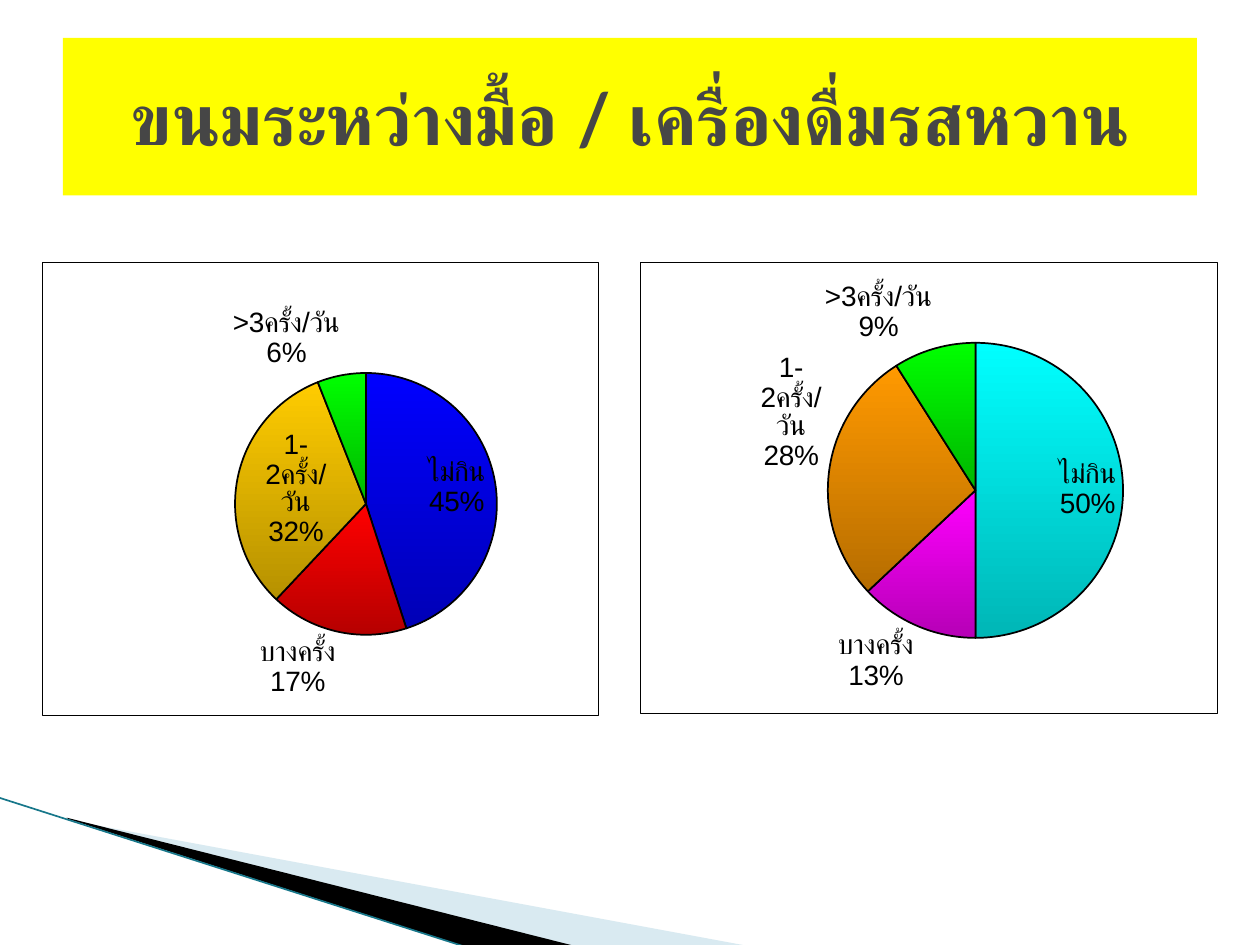
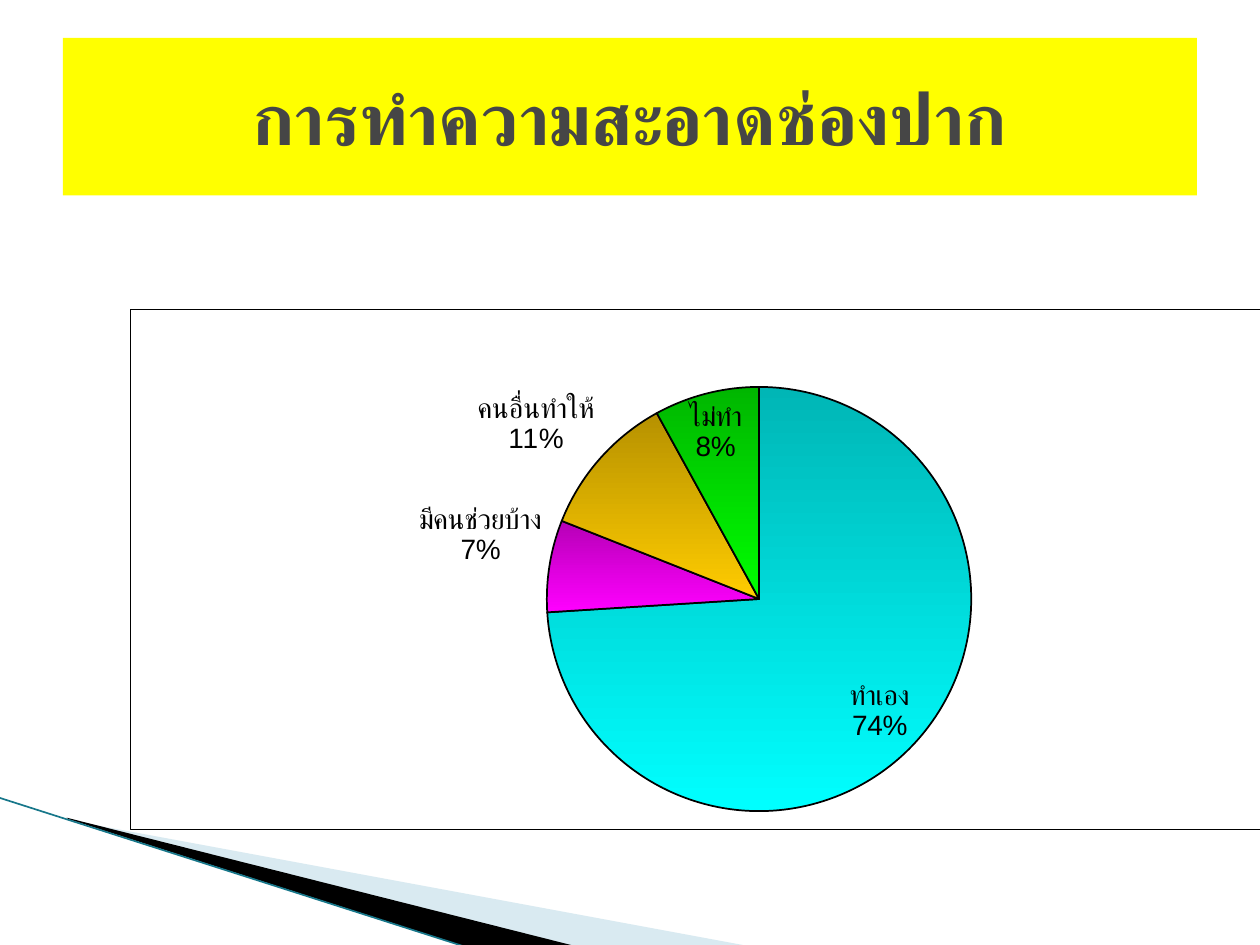
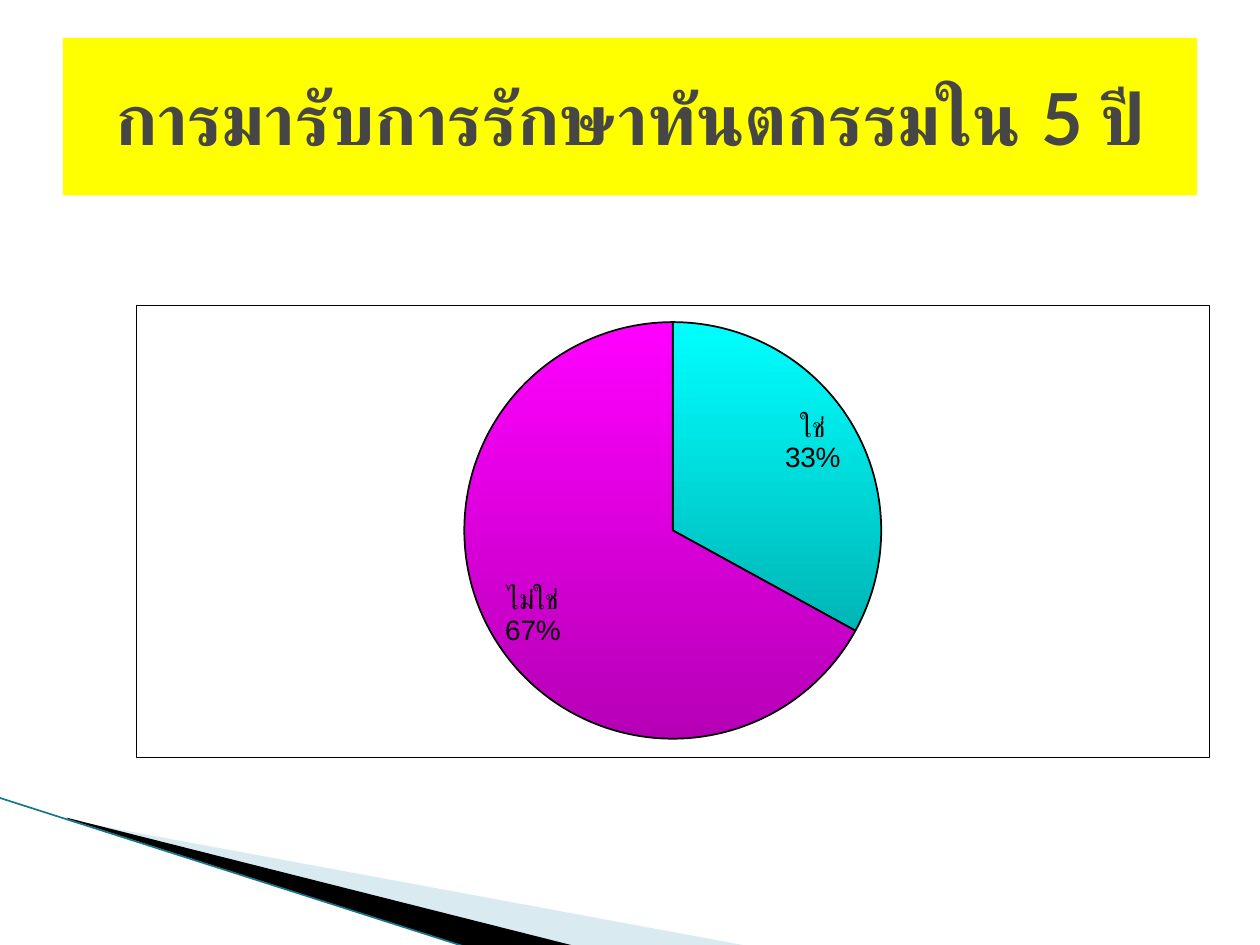
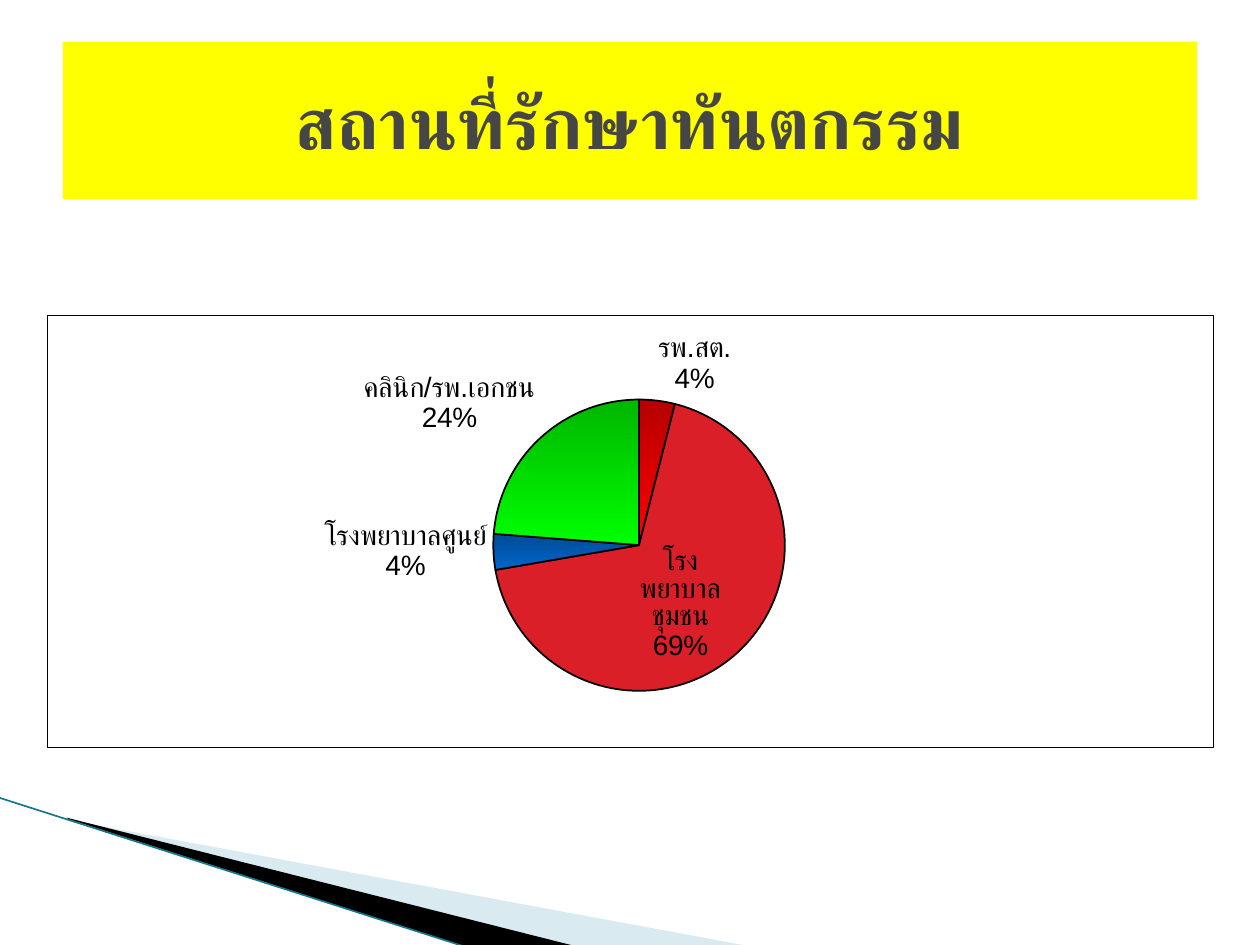
from lxml.etree import SubElement
from pptx import Presentation
from pptx.chart.data import CategoryChartData
from pptx.dml.color import RGBColor
from pptx.enum.chart import XL_CHART_TYPE as ChartType, XL_LABEL_POSITION as LabelPosition
from pptx.enum.shapes import MSO_CONNECTOR as Connector, MSO_SHAPE as Preset
from pptx.enum.text import MSO_ANCHOR as Anchor, PP_ALIGN as Align
from pptx.oxml import parse_xml
from pptx.oxml.ns import nsdecls, qn
from pptx.util import Inches, Pt

COLUMNS, ROWS = 100, 75
BLACK, WHITE, YELLOW, GREY = "000000", "FFFFFF", "FFFF00", "464646"
PALE_BLUE, TEAL = "A0CBDC", "17778A"
BLUE, RED, GOLD, GREEN = "0000FF", "FF0000", "FFCC00", "00FF00"
CYAN, MAGENTA, ORANGE, NAVY, CRIMSON = "00FFFF", "FF00FF", "FF9900", "0066CC", "DA1F28"
DARK_SHADE = {NAVY: 50000}
SNACK_ANSWERS = ["ไม่กิน", "บางครั้ง", "1-2ครั้ง/วัน", ">3ครั้ง/วัน"]


def color(value):
    return RGBColor.from_string(value)


class SurveyDeck:
    title_font, chart_font = "Lato", "Arial"
    title_size, label_size, chart_size = 41, 16, 9.2

    def __init__(self):
        self.deck = Presentation()
        self.deck.slide_width, self.deck.slide_height = Inches(10), Inches(7.5)
        self.page = None

    def x(self, columns):
        return round(self.deck.slide_width * columns / COLUMNS)

    def y(self, rows):
        return round(self.deck.slide_height * rows / ROWS)

    def place(self, left, top, width, height):
        return self.x(left), self.y(top), self.x(width), self.y(height)

    def add_page(self):
        self.page = self.deck.slides.add_slide(self.deck.slide_layouts[6])
        self.wedge([(5.5, 65.1), (59.5, 75.1), (45.6, 75.1), (5.5, 65)], PALE_BLUE, 40)
        self.wedge([(5.3, 64.9), (45.7, 75.1), (37.2, 75.2), (5.4, 65)], BLACK)
        self.line((-0.1, 63.3), (37.1, 75.2), TEAL, 0.95)

    def wedge(self, corners, fill, opacity=100):
        start, *others = [(self.x(column), self.y(row)) for column, row in corners]
        builder = self.page.shapes.build_freeform(*start, scale=1.0)
        builder.add_line_segments(others, close=True)
        shape = builder.convert_to_shape()
        shape.shadow.inherit = False
        shape.fill.solid()
        shape.fill.fore_color.rgb = color(fill)
        shape.line.fill.background()
        if opacity < 100:
            tint = shape.element.find(".//" + qn("a:srgbClr"))
            SubElement(tint, qn("a:alpha"), val=str(opacity * 1000))

    def line(self, start, end, stroke, width):
        ends = [self.x(start[0]), self.y(start[1]), self.x(end[0]), self.y(end[1])]
        connector = self.page.shapes.add_connector(Connector.STRAIGHT, *ends)
        connector.line.color.rgb = color(stroke)
        connector.line.width = Pt(width)
        SubElement(connector.element.spPr, qn("a:effectLst"))

    def title(self, text, top=3):
        box = self.page.shapes.add_shape(Preset.RECTANGLE, *self.place(5, top, 90, 12.5))
        box.shadow.inherit = False
        box.fill.solid()
        box.fill.fore_color.rgb = color(YELLOW)
        box.line.fill.background()
        box.text_frame.word_wrap = True
        box.text_frame.vertical_anchor = Anchor.MIDDLE
        para = box.text_frame.paragraphs[0]
        para.alignment = Align.CENTER
        span = para.add_run()
        span.text = text
        self.style(span.font, self.title_font, self.title_size, GREY)
        span.font.bold = True

    def style(self, font, name, size, tint):
        font.name, font.size = name, Pt(size)
        font.color.rgb = color(tint)

    def pie(self, frame, circle, answers, shares, tints, dark_first=False, rounded=False):
        data = CategoryChartData()
        data.categories = answers
        data.add_series("Series 1", shares)
        chart = self.page.shapes.add_chart(ChartType.PIE, *self.place(*frame), data).chart
        chart.has_title = chart.has_legend = False
        self.style(chart.font, self.chart_font, self.chart_size, BLACK)
        self.frame(chart)
        self.plot_area(chart, frame, circle)
        chart.plots[0].vary_by_categories = True
        series = chart.plots[0].series[0]
        for index, tint in enumerate(tints):
            self.slice(series.points[index].format, tint, dark_first)
        self.labels(series.data_labels, rounded)

    def frame(self, chart):
        border = parse_xml(
            f'<c:spPr {nsdecls("c", "a")}>'
            f'<a:solidFill><a:srgbClr val="{WHITE}"/></a:solidFill>'
            f'<a:ln w="{Pt(0.25)}"><a:solidFill><a:srgbClr val="{BLACK}"/></a:solidFill></a:ln>'
            '</c:spPr>')
        chart.element.find(qn("c:txPr")).addprevious(border)

    def plot_area(self, chart, frame, circle):
        left, top, width, height = frame
        circle_left, circle_top, diameter = circle
        area = chart.element.find(".//" + qn("c:plotArea"))
        for layout in area.findall(qn("c:layout")):
            area.remove(layout)
        layout = parse_xml(f'<c:layout {nsdecls("c")}><c:manualLayout/></c:layout>')
        settings = {
            "layoutTarget": "inner", "xMode": "edge", "yMode": "edge",
            "x": (circle_left - left) / width, "y": (circle_top - top) / height,
            "w": diameter / width, "h": diameter / height}
        for name, value in settings.items():
            SubElement(layout[0], qn("c:" + name), val=str(value))
        area.insert(0, layout)

    def slice(self, style, tint, dark_first):
        style.line.color.rgb = color(BLACK)
        style.line.width = Pt(1)
        if tint == CRIMSON:
            style.fill.solid()
            style.fill.fore_color.rgb = color(tint)
            return
        style.fill.gradient()
        style.fill.gradient_angle = 270
        stops = list(style.fill.gradient_stops)
        for stop, position in zip(stops, (0, 1)):
            stop.position = position
            stop.color.rgb = color(tint)
        dark = stops[0 if dark_first else 1].element.find(qn("a:srgbClr"))
        SubElement(dark, qn("a:shade"), val=str(DARK_SHADE.get(tint, 46275)))

    def labels(self, labels, rounded):
        self.style(labels.font, self.chart_font, self.label_size, BLACK)
        labels.number_format = '0"%"' if rounded else "0%"
        labels.number_format_is_linked = False
        labels.show_category_name = True
        labels.show_value = rounded
        labels.show_percentage = not rounded
        labels.position = LabelPosition.BEST_FIT
        separator = parse_xml(f'<c:separator {nsdecls("c")}>\n</c:separator>')
        labels._element.find(qn("c:showBubbleSize")).addnext(separator)


def main():
    survey = SurveyDeck()

    survey.add_page()
    survey.pie((50.8, 20.8, 45.8, 35.8), (65.7, 27.2, 23.45), SNACK_ANSWERS,
               (50, 13, 28, 9), (CYAN, MAGENTA, ORANGE, GREEN))
    survey.title("ขนมระหว่างมื้อ / เครื่องดื่มรสหวาน")
    survey.pie((3.3, 20.8, 44.2, 36), (18.65, 29.6, 20.8), SNACK_ANSWERS,
               (45, 17, 32, 6), (BLUE, RED, GOLD, GREEN))

    survey.add_page()
    survey.title("การทำความสะอาดช่องปาก")
    survey.pie((10.3, 24.5, 89.7, 41.3), (43.4, 30.7, 33.7),
               ["ทำเอง", "มีคนช่วยบ้าง", "คนอื่นทำให้", "ไม่ทำ"],
               (74, 7, 11, 8), (CYAN, MAGENTA, GOLD, GREEN), dark_first=True)

    survey.add_page()
    survey.title("การมารับการรักษาทันตกรรมใน 5 ปี")
    survey.pie((10.8, 24.2, 85.2, 35.9), (36.85, 25.55, 33.1),
               ["ใช่", "ไม่ใช่"], (33, 67), (CYAN, MAGENTA))

    survey.add_page()
    survey.title("สถานที่รักษาทันตกรรม", top=3.3)
    survey.pie((3.7, 25, 92.6, 34.3), (39.15, 31.7, 23.15),
               ["รพ.สต.", "โรงพยาบาลชุมชน", "โรงพยาบาลศูนย์", "คลินิก/รพ.เอกชน"],
               (4, 69, 4, 24), (RED, CRIMSON, NAVY, GREEN), dark_first=True, rounded=True)

    survey.deck.save("out.pptx")


if __name__ == "__main__":
    main()
